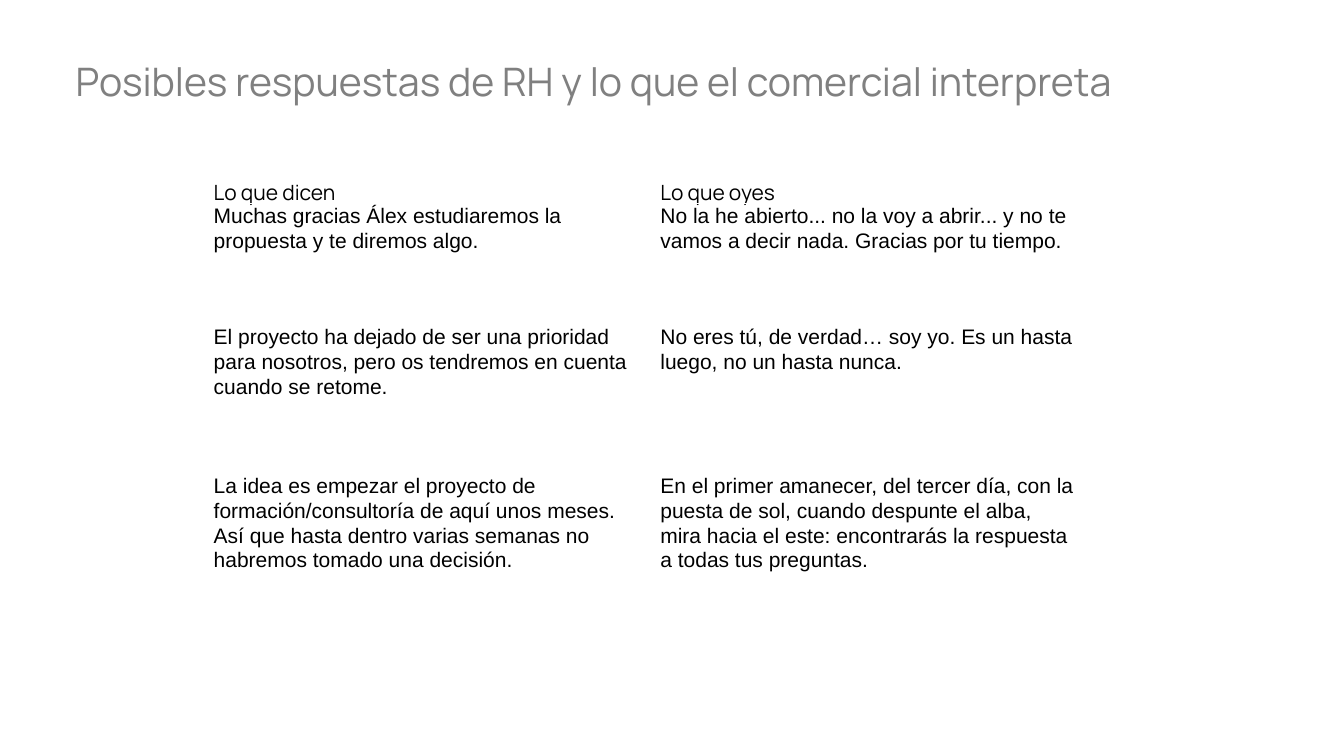
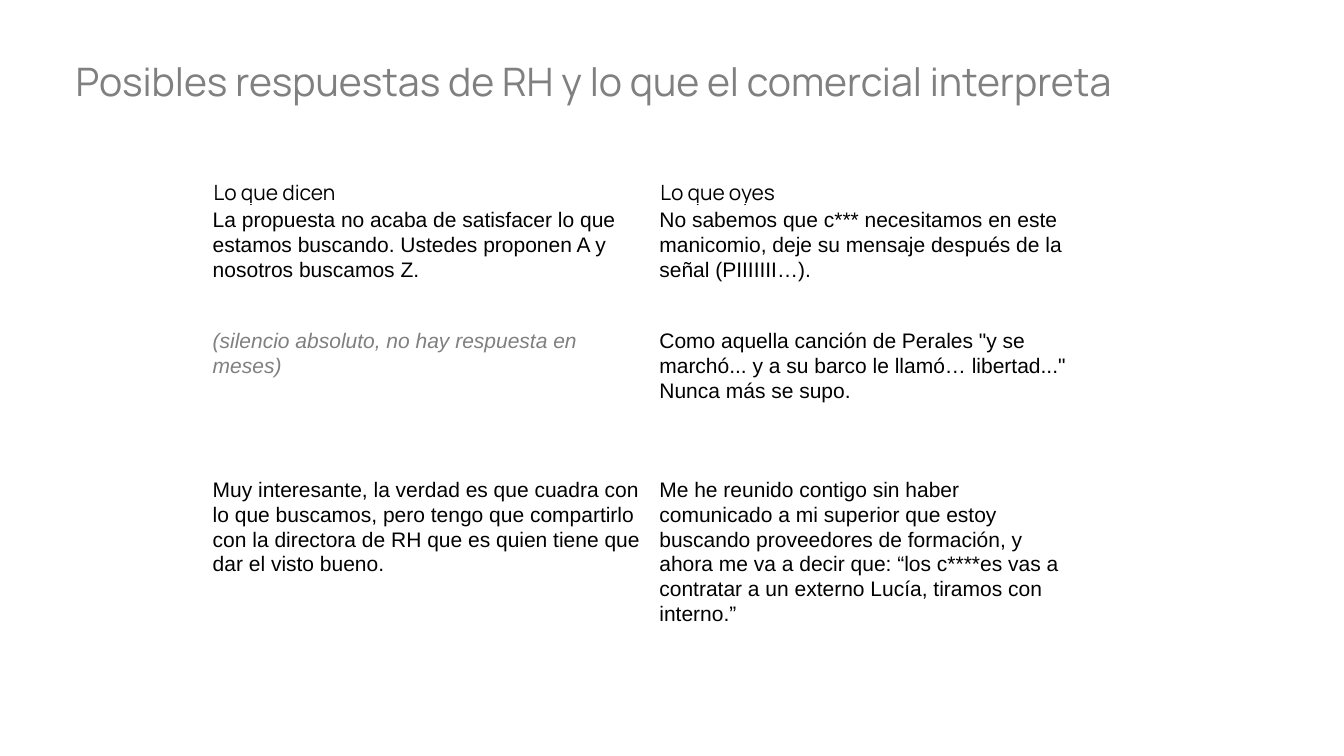
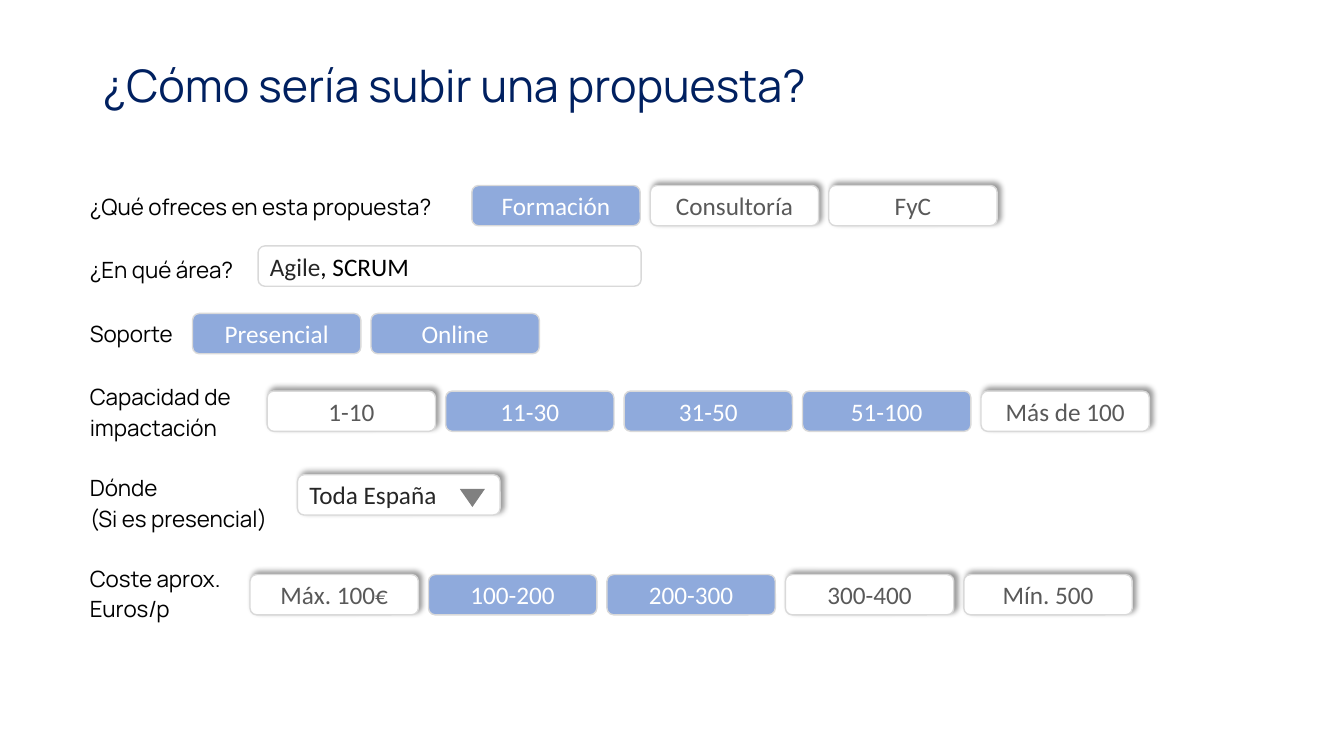
from dataclasses import dataclass

from lxml import etree
from pptx import Presentation
from pptx.dml.color import RGBColor
from pptx.enum import shapes, text
from pptx.oxml import ns
from pptx.util import Inches, Pt

COLORS = {
    "black": "000000",
    "white": "FFFFFF",
    "grey": "808080",
    "navy": "002060",
    "selected": "8FAADC",
    "outline": "D9D9D9",
    "option": "595959",
    "entry": "262626",
}
HEADING_FONT, BODY_FONT, FORM_FONT = "Manrope", "Arial", "Calibri"
ANSWERS_TITLE = "Posibles respuestas de RH y lo que el comercial interpreta"
ANSWERS_HEADER = ("Lo que dicen", "Lo que oyes")
BUTTON_WIDTH, BUTTON_HEIGHT, BUTTON_PITCH = 1.67, 0.4, 1.77


@dataclass(frozen=True)
class Style:
    size: float
    font: str
    color: str
    italic: bool = False


@dataclass(frozen=True)
class AnswerTable:
    rows: tuple[tuple[str, str], ...]
    side_margin: float
    top_margin: float = 0


@dataclass(frozen=True)
class Question:
    lines: tuple[str, ...]
    row_height: float


@dataclass(frozen=True)
class ButtonRow:
    left: float
    top: float
    options: tuple[str, ...]
    selected: tuple[str, ...]


HEADER = Style(15, HEADING_FONT, "black")
ANSWER = Style(15, BODY_FONT, "black")
SILENCE = Style(15, BODY_FONT, "grey", italic=True)
QUESTION = Style(16, HEADING_FONT, "black")

ANSWER_TABLES = (
    AnswerTable((
        ("Muchas gracias Álex estudiaremos la propuesta y te diremos algo.",
         "No la he abierto... no la voy a abrir... y no te vamos a decir nada. "
         "Gracias por tu tiempo."),
        ("El proyecto ha dejado de ser una prioridad para nosotros, pero os "
         "tendremos en cuenta cuando se retome.",
         "No eres tú, de verdad… soy yo. Es un hasta luego, no un hasta nunca."),
        ("La idea es empezar el proyecto de formación/consultoría de aquí unos "
         "meses. Así que hasta dentro varias semanas no habremos tomado una decisión.",
         "En el primer amanecer, del tercer día, con la puesta de sol, cuando "
         "despunte el alba, mira hacia el este: encontrarás la respuesta a todas "
         "tus preguntas."),
    ), side_margin=0.07),
    AnswerTable((
        ("La propuesta no acaba de satisfacer lo que estamos buscando. Ustedes "
         "proponen A y nosotros buscamos Z.",
         "No sabemos que c*** necesitamos en este manicomio, deje su mensaje "
         "después de la señal (PIIIIIII…)."),
        ("(silencio absoluto, no hay respuesta en meses)",
         'Como aquella canción de Perales "y se marchó... y a su barco le llamó… '
         'libertad..." Nunca más se supo.'),
        ("Muy interesante, la verdad es que cuadra con lo que buscamos, pero tengo "
         "que compartirlo con la directora de RH que es quien tiene que dar el "
         "visto bueno.",
         "Me he reunido contigo sin haber comunicado a mi superior que estoy "
         "buscando proveedores de formación, y ahora me va a decir que: “los "
         "c****es vas a contratar a un externo Lucía, tiramos con interno.”"),
    ), side_margin=0.06, top_margin=0.04),
)

QUESTIONS = (
    Question(("¿Qué ofreces en esta propuesta?",), 0.63),
    Question(("¿En qué área?",), 0.63),
    Question(("Soporte",), 0.63),
    Question(("Capacidad de", "impactación"), 0.9),
    Question(("Dónde", "(Si es presencial)"), 0.9),
    Question(("Coste aprox.", "Euros/p"), 0.71),
)

BUTTON_ROWS = (
    ButtonRow(4.68, 1.84, ("Formación", "Consultoría", "FyC"), ("Formación",)),
    ButtonRow(1.91, 3.11, ("Presencial", "Online"), ("Presencial", "Online")),
    ButtonRow(2.65, 3.88, ("1-10", "11-30", "31-50", "51-100", "Más de 100"),
              ("11-30", "31-50", "51-100")),
    ButtonRow(2.48, 5.7, ("Máx. 100€", "100-200", "200-300", "300-400", "Mín. 500"),
              ("100-200", "200-300")),
)


def rgb(name: str) -> RGBColor:
    return RGBColor.from_string(COLORS[name])


def add_run(paragraph, words: str, style: Style) -> None:
    run = paragraph.add_run()
    run.text = words
    run.font.size = Pt(style.size)
    run.font.name = style.font
    run.font.bold = False
    run.font.italic = style.italic
    run.font.color.rgb = rgb(style.color)


def add_titled_slide(presentation, title: str, style: Style, left: float,
                     width: float, height: float):
    slide = presentation.slides.add_slide(presentation.slide_layouts[5])
    shape = slide.shapes.title
    shape.left, shape.top = Inches(left), Inches(0.52)
    shape.width, shape.height = Inches(width), Inches(height)
    frame = shape.text_frame
    frame.word_wrap = True
    frame.auto_size = text.MSO_AUTO_SIZE.SHAPE_TO_FIT_TEXT
    frame.vertical_anchor = text.MSO_ANCHOR.TOP
    frame.paragraphs[0].alignment = text.PP_ALIGN.LEFT
    add_run(frame.paragraphs[0], title, style)
    return slide


def add_plain_table(slide, left: float, top: float, widths: tuple[float, ...],
                    heights: tuple[float, ...]):
    """Add a table without banding, header style or cell fills."""
    table = slide.shapes.add_table(
        len(heights), len(widths), Inches(left), Inches(top),
        Inches(sum(widths)), Inches(sum(heights))).table
    table.first_row = table.horz_banding = False
    for column, width in zip(table.columns, widths):
        column.width = Inches(width)
    for row, height in zip(table.rows, heights):
        row.height = Inches(height)
    for cell in table.iter_cells():
        cell.fill.background()
    return table


def add_answer_slide(presentation, content: AnswerTable) -> None:
    slide = add_titled_slide(presentation, ANSWERS_TITLE,
                             Style(28, HEADING_FONT, "grey"), 0.65, 11.87, 0.57)
    table = add_plain_table(slide, 2.05, 1.75, (4.43, 4.27), (0.26, 1.2, 1.47, 2.01))
    for row_index, row in enumerate((ANSWERS_HEADER, *content.rows)):
        is_header = row_index == 0
        for column_index, words in enumerate(row):
            cell = table.cell(row_index, column_index)
            side = 0.07 if is_header else content.side_margin
            cell.margin_left = cell.margin_right = Inches(side)
            cell.margin_top = Inches(0 if is_header else content.top_margin)
            cell.margin_bottom = 0
            paragraph = cell.text_frame.paragraphs[0]
            paragraph.line_spacing = 1.07
            paragraph.space_after = Pt(8)
            style = HEADER if is_header else SILENCE if words.startswith("(") else ANSWER
            add_run(paragraph, words, style)


def add_raised_shadow(shape) -> None:
    """Cast a soft shadow up and to the right."""
    effects = shape._element.spPr.find(ns.qn("a:effectLst"))
    shadow = etree.SubElement(effects, ns.qn("a:outerShdw"), blurRad=str(Pt(4)),
                              dist=str(Pt(3)), dir=str(315 * 60000),
                              algn="bl", rotWithShape="0")
    color = etree.SubElement(shadow, ns.qn("a:srgbClr"), val=COLORS["black"])
    etree.SubElement(color, ns.qn("a:alpha"), val="40000")


def add_field(parent, left: float, top: float, width: float,
              runs: tuple[tuple[str, str], ...], fill: str = "white",
              raised: bool = False, centered: bool = False):
    """Add a rounded form field; each run is its words and colour name."""
    field = parent.shapes.add_shape(
        shapes.MSO_SHAPE.ROUNDED_RECTANGLE, Inches(left), Inches(top),
        Inches(width), Inches(BUTTON_HEIGHT))
    field.fill.solid()
    field.fill.fore_color.rgb = rgb(fill)
    field.line.color.rgb = rgb("outline")
    field.line.width = Pt(1)
    field.shadow.inherit = False
    if raised:
        add_raised_shadow(field)
    frame = field.text_frame
    frame.word_wrap = True
    frame.vertical_anchor = text.MSO_ANCHOR.MIDDLE
    paragraph = frame.paragraphs[0]
    paragraph.alignment = text.PP_ALIGN.CENTER if centered else text.PP_ALIGN.LEFT
    for words, color in runs:
        add_run(paragraph, words, Style(18, FORM_FONT, color))


def add_button_row(slide, row: ButtonRow) -> None:
    group = slide.shapes.add_group_shape()
    for index, option in enumerate(row.options):
        chosen = option in row.selected
        add_field(group, row.left + index * BUTTON_PITCH, row.top, BUTTON_WIDTH,
                  ((option, "white" if chosen else "option"),),
                  fill="selected" if chosen else "white",
                  raised=not chosen, centered=True)


def add_dropdown(slide) -> None:
    group = slide.shapes.add_group_shape()
    add_field(group, 2.95, 4.71, 2.01, (("Toda España", "entry"),), raised=True)
    arrow = group.shapes.add_shape(shapes.MSO_SHAPE.ISOSCELES_TRIANGLE, Inches(4.56),
                                   Inches(4.85), Inches(0.25), Inches(0.18))
    arrow.rotation = 180
    arrow.fill.solid()
    arrow.fill.fore_color.rgb = rgb("grey")
    arrow.line.fill.background()
    arrow.shadow.inherit = False


def add_form_slide(presentation) -> None:
    slide = add_titled_slide(presentation, "¿Cómo sería subir una propuesta?",
                             Style(32, HEADING_FONT, "navy"), 0.92, 8.48, 0.64)
    table = add_plain_table(slide, 0.79, 1.85, (5.4,),
                            tuple(question.row_height for question in QUESTIONS))
    for index, question in enumerate(QUESTIONS):
        frame = table.cell(index, 0).text_frame
        for line_index, line in enumerate(question.lines):
            paragraph = frame.add_paragraph() if line_index else frame.paragraphs[0]
            add_run(paragraph, line, QUESTION)
    add_field(slide, 2.56, 2.44, 3.8, (("Agile", "entry"), (", SCRUM", "black")))
    for row in BUTTON_ROWS:
        add_button_row(slide, row)
    add_dropdown(slide)


def main() -> None:
    presentation = Presentation()
    presentation.slide_width, presentation.slide_height = Inches(13.33), Inches(7.5)
    for content in ANSWER_TABLES:
        add_answer_slide(presentation, content)
    add_form_slide(presentation)
    presentation.save("out.pptx")


if __name__ == "__main__":
    main()
